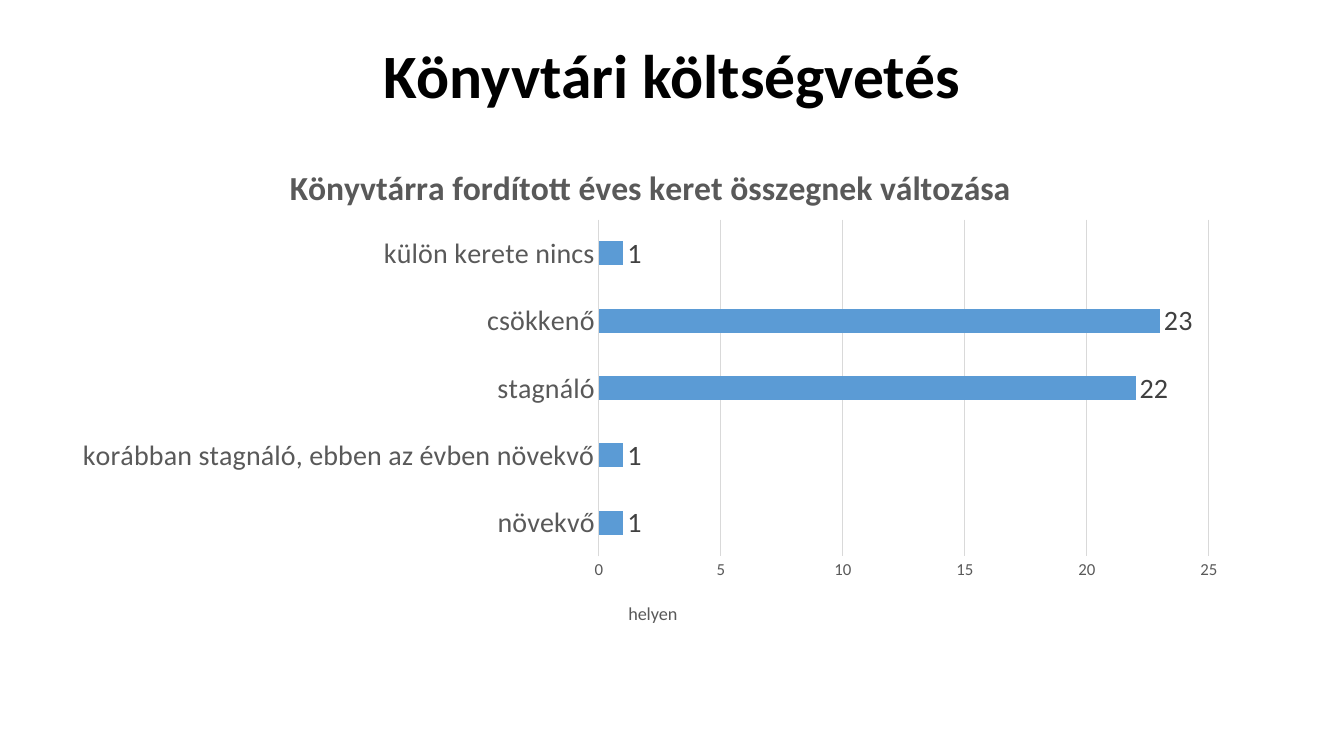
from lxml import etree
from pptx import Presentation
from pptx.chart.data import CategoryChartData
from pptx.dml.color import RGBColor
from pptx.enum.chart import XL_CHART_TYPE, XL_LABEL_POSITION, XL_TICK_MARK
from pptx.enum.text import MSO_ANCHOR, PP_ALIGN
from pptx.oxml.ns import qn
from pptx.util import Inches, Pt

BAR = XL_CHART_TYPE.BAR_CLUSTERED
OUTSIDE_END = XL_LABEL_POSITION.OUTSIDE_END
NO_TICK = XL_TICK_MARK.NONE
MIDDLE = MSO_ANCHOR.MIDDLE
CENTER = PP_ALIGN.CENTER

HEADING = "Könyvtári költségvetés"
CHART_TITLE = "Könyvtárra fordított éves keret összegnek változása"
UNIT = "helyen"
BUDGET_CHANGES = [
    ("növekvő", 1),
    ("korábban stagnáló, ebben az évben növekvő", 1),
    ("stagnáló", 22),
    ("csökkenő", 23),
    ("külön kerete nincs", 1),
]

FONT = "Calibri"
BLACK, GREY, DARK_GREY = "000000", "595959", "404040"
GRID_GREY, BAR_BLUE = "D9D9D9", "5B9BD5"

# left, top, width, height in inches
HEADING_BOX = (0.92, 0.3, 11.5, 0.96)
CHART_BOX = (0.59, 1.42, 11.72, 4.95)
PLOT_BOX = (5.94, 2.18, 6.05, 3.34)
UNIT_CORNER = (6.2, 5.94)


def rgb(hex_color):
    return RGBColor.from_string(hex_color)


def format_font(font, size, color, bold=False):
    font.name, font.size, font.bold = FONT, Pt(size), bold
    font.color.rgb = rgb(color)


def write_text(frame, text, size, color, bold=False, line_spacing=None):
    paragraph = frame.paragraphs[0]
    paragraph.alignment = CENTER
    paragraph.line_spacing = line_spacing
    run = paragraph.add_run()
    run.text = text
    format_font(run.font, size, color, bold)


def draw_line(line):
    line.color.rgb = rgb(GRID_GREY)
    line.width = Pt(0.75)


def place_in_chart(parent, index, box, inner=False):
    """Give a chart part a manual layout from slide inches."""
    for old in parent.findall(qn("c:layout")):
        parent.remove(old)
    layout = etree.Element(qn("c:layout"))
    manual = etree.SubElement(layout, qn("c:manualLayout"))
    left, top, width, height = CHART_BOX
    settings = [("layoutTarget", "inner")] if inner else []
    settings += [("xMode", "edge"), ("yMode", "edge")]
    fractions = [(box[0] - left) / width, (box[1] - top) / height]
    if inner:
        fractions += [box[2] / width, box[3] / height]
    settings += [(key, f"{value:.4f}") for key, value in zip("xywh", fractions)]
    for key, value in settings:
        etree.SubElement(manual, qn(f"c:{key}")).set("val", value)
    parent.insert(index, layout)


def add_heading(slide):
    frame = slide.shapes.add_textbox(*map(Inches, HEADING_BOX)).text_frame
    frame.word_wrap = True
    frame.vertical_anchor = MIDDLE
    write_text(frame, HEADING, 44, BLACK, bold=True, line_spacing=0.9)


def add_budget_chart(slide):
    data = CategoryChartData()
    data.categories = [change for change, _ in BUDGET_CHANGES]
    data.add_series(UNIT, [places for _, places in BUDGET_CHANGES])
    chart = slide.shapes.add_chart(BAR, *map(Inches, CHART_BOX), data).chart
    format_font(chart.font, 10, BLACK)
    chart.has_legend = False
    chart.has_title = True
    write_text(chart.chart_title.text_frame, CHART_TITLE, 24, GREY, bold=True)

    plot = chart.plots[0]
    plot.gap_width = 182
    plot.vary_by_categories = False
    bars = plot.series[0]
    bars.format.fill.solid()
    bars.format.fill.fore_color.rgb = rgb(BAR_BLUE)
    labels = bars.data_labels
    labels.show_value = True
    labels.position = OUTSIDE_END
    format_font(labels.font, 20, DARK_GREY)

    changes, places = chart.category_axis, chart.value_axis
    for axis, size in ((changes, 20), (places, 12)):
        axis.major_tick_mark = axis.minor_tick_mark = NO_TICK
        format_font(axis.tick_labels.font, size, GREY)
    draw_line(changes.format.line)
    places.format.line.fill.background()
    places.minimum_scale, places.maximum_scale, places.major_unit = 0, 25, 5
    draw_line(places.major_gridlines.format.line)
    write_text(places.axis_title.text_frame, UNIT, 13, GREY)

    place_in_chart(places.axis_title._element, 1, UNIT_CORNER)
    plot_area = chart._chartSpace.find(".//" + qn("c:plotArea"))
    place_in_chart(plot_area, 0, PLOT_BOX, inner=True)


def main():
    deck = Presentation()
    deck.slide_width, deck.slide_height = Inches(13.33), Inches(7.5)
    slide = deck.slides.add_slide(deck.slide_layouts[6])
    add_heading(slide)
    add_budget_chart(slide)
    deck.save("out.pptx")


if __name__ == "__main__":
    main()
